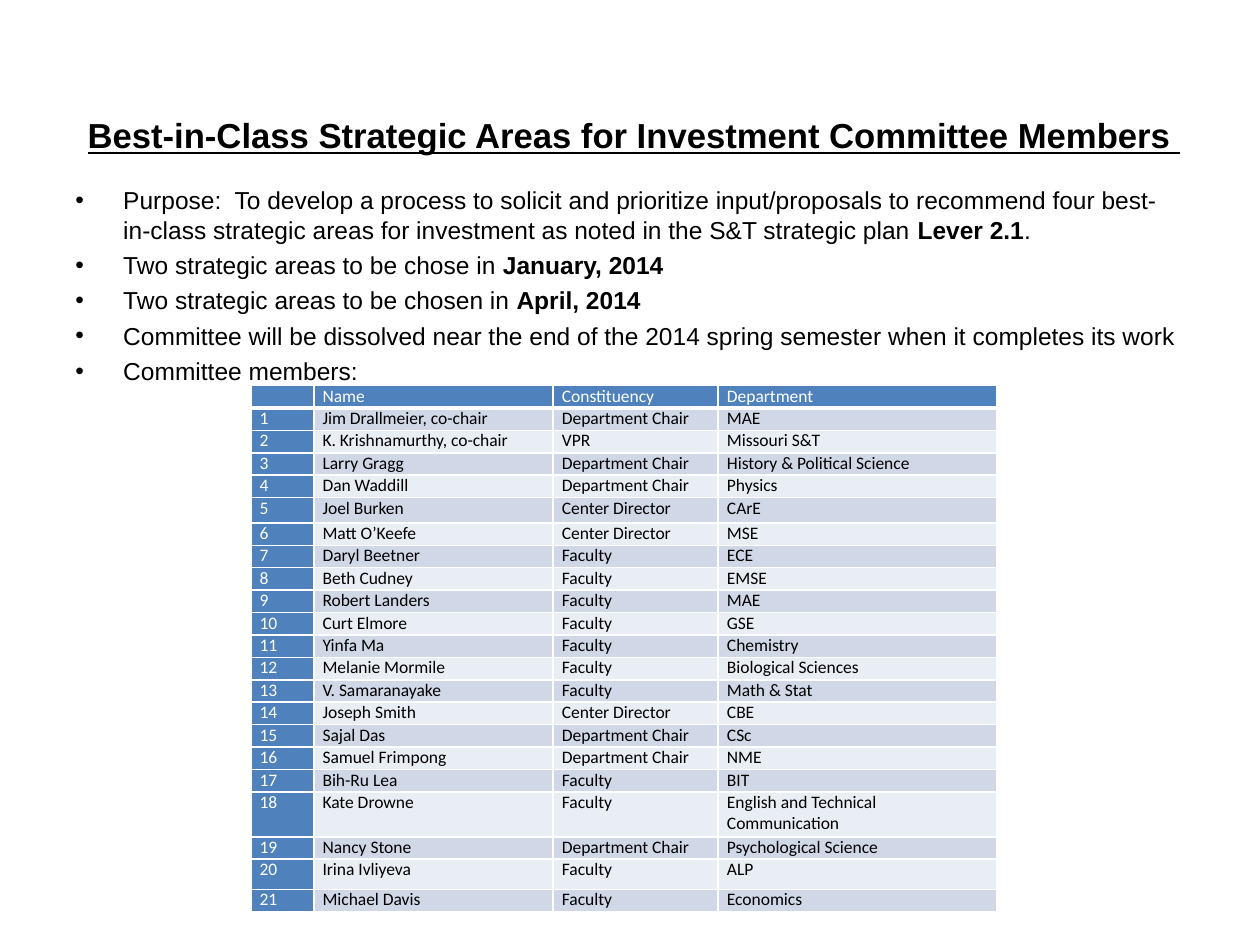
"""Build the committee members slide: title, purpose bullets and roster table."""
from dataclasses import dataclass

from lxml.etree import SubElement as Sub
from pptx import Presentation as Deck
from pptx.dml.color import RGBColor as Rgb
from pptx.enum.text import MSO_ANCHOR as Anchor, PP_ALIGN as Align
from pptx.oxml.ns import qn
from pptx.util import Inches, Pt


@dataclass(frozen=True)
class Theme:
    ink: str = "000000"
    white: str = "FFFFFF"
    blue: str = "4F81BD"
    bands: tuple = ("D0D8E8", "E9EDF4")
    sans: str = "Arial"
    cell: str = "Calibri"
    head: float = 19.8
    body: float = 14
    small: float = 10
    gap: float = 3.4


TITLE = "Best-in-Class Strategic Areas for Investment Committee Members "
POINTS = [
    [("Purpose:  To develop a process to solicit and prioritize input/proposals to recommend "
      "four best-in-class strategic areas for investment as noted in the S&T strategic plan ", False),
     ("Lever 2.1", True), (".", False)],
    [("Two strategic areas to be chose in ", False), ("January, 2014", True)],
    [("Two strategic areas to be chosen in ", False), ("April, 2014", True)],
    [("Committee will be dissolved near the end of the 2014 spring semester "
      "when it completes its work", False)],
    [("Committee members:", False)],
]
HEADS = ("", "Name", "Constituency", "Department")
CHAIR, CENTER, STAFF = "Department Chair", "Center Director", "Faculty"
PEOPLE = [
    ("Jim Drallmeier, co-chair", CHAIR, "MAE"),
    ("K. Krishnamurthy, co-chair", "VPR", "Missouri S&T"),
    ("Larry Gragg", CHAIR, "History & Political Science"),
    ("Dan Waddill", CHAIR, "Physics"),
    ("Joel Burken", CENTER, "CArE"),
    ("Matt O’Keefe", CENTER, "MSE"),
    ("Daryl Beetner", STAFF, "ECE"),
    ("Beth Cudney", STAFF, "EMSE"),
    ("Robert Landers", STAFF, "MAE"),
    ("Curt Elmore", STAFF, "GSE"),
    ("Yinfa Ma", STAFF, "Chemistry"),
    ("Melanie Mormile", STAFF, "Biological Sciences"),
    ("V. Samaranayake", STAFF, "Math & Stat"),
    ("Joseph Smith", CENTER, "CBE"),
    ("Sajal Das", CHAIR, "CSc"),
    ("Samuel Frimpong", CHAIR, "NME"),
    ("Bih-Ru Lea", STAFF, "BIT"),
    ("Kate Drowne", STAFF, "English and Technical Communication"),
    ("Nancy Stone", CHAIR, "Psychological Science"),
    ("Irina Ivliyeva", STAFF, "ALP"),
    ("Michael Davis", STAFF, "Economics"),
]
WIDTHS = (5, 19, 13.1, 22.1)
TALL = {5: 2, 20: 2.4}
DOUBLE = 18


def grid(units):
    return Inches(units / 10)


def write(para, text, font, size, color, bold=False, under=False):
    run = para.add_run()
    run.text = text
    face = run.font
    face.name, face.size, face.bold, face.underline = font, Pt(size), bold, under
    face.color.rgb = Rgb.from_string(color)


def bullet(para, indent):
    props = para._p.get_or_add_pPr()
    props.set("marL", str(indent))
    props.set("indent", str(-indent))
    Sub(props, qn("a:buFont"), typeface="Arial")
    Sub(props, qn("a:buChar"), char="•")


def border(cell, color, **widths):
    props = cell._tc.get_or_add_tcPr()
    for at, side in enumerate("LRTB"):
        line = Sub(props, qn(f"a:ln{side}"), w=str(Pt(widths.get(side, 1))))
        fill = Sub(line, qn("a:solidFill"))
        Sub(fill, qn("a:srgbClr"), val=color)
        props.insert(at, line)


class Page:
    def __init__(self, slide, theme):
        self.slide, self.theme = slide, theme

    def box(self, x, y, w, h, anchor):
        frame = self.slide.shapes.add_textbox(*map(grid, (x, y, w, h))).text_frame
        frame.word_wrap, frame.vertical_anchor = True, anchor
        return frame

    def title(self, text, *place):
        look = self.theme
        para = self.box(*place, Anchor.MIDDLE).paragraphs[0]
        para.alignment = Align.CENTER
        write(para, text, look.sans, look.head, look.ink, bold=True, under=True)

    def points(self, items, *place):
        look = self.theme
        frame = self.box(*place, Anchor.TOP)
        for at, runs in enumerate(items):
            para = frame.add_paragraph() if at else frame.paragraphs[0]
            if at:
                para.space_before = Pt(look.gap)
            bullet(para, grid(3.8))
            for text, bold in runs:
                write(para, text, look.sans, look.body, look.ink, bold)

    def cell(self, cell, text, fill, color, **lines):
        look = self.theme
        cell.margin_left = cell.margin_right = grid(0.7)
        cell.margin_top = cell.margin_bottom = 0
        cell.fill.solid()
        cell.fill.fore_color.rgb = Rgb.from_string(fill)
        border(cell, look.white, **lines)
        para = cell.text_frame.paragraphs[0]
        if text:
            write(para, text, look.cell, look.small, color)
        else:
            para._p.get_or_add_endParaRPr().set("sz", str(look.small * 100))

    def table(self, rows, x, y, h):
        look = self.theme
        size = map(grid, (x, y, sum(WIDTHS), h))
        table = self.slide.shapes.add_table(len(rows), len(WIDTHS), *size).table
        table.horz_banding = False
        for col, width in zip(table.columns, WIDTHS):
            col.width = grid(width)
        unit = (h - sum(TALL.values())) / (len(rows) - len(TALL) + 1)
        for r, row in enumerate(rows):
            table.rows[r].height = grid(TALL.get(r, unit * (2 if r == DOUBLE else 1)))
            for c, text in enumerate(row):
                edge = r == 0 or c == 0
                fill = look.blue if edge else look.bands[(r - 1) % 2]
                color = look.white if edge else look.ink
                self.cell(table.cell(r, c), text, fill, color, B=1 if r else 3)


def main():
    deck = Deck()
    deck.slide_width, deck.slide_height = grid(100), grid(75)
    page = Page(deck.slides.add_slide(deck.slide_layouts[6]), Theme())
    page.title(TITLE, 2.4, 9.2, 95.8, 3)
    page.points(POINTS, 5, 14.2, 90, 16.4)
    roster = [(str(n), *who) for n, who in enumerate(PEOPLE, 1)]
    page.table([HEADS, *roster], 19.9, 30.6, 41.8)
    deck.save("out.pptx")


if __name__ == "__main__":
    main()
